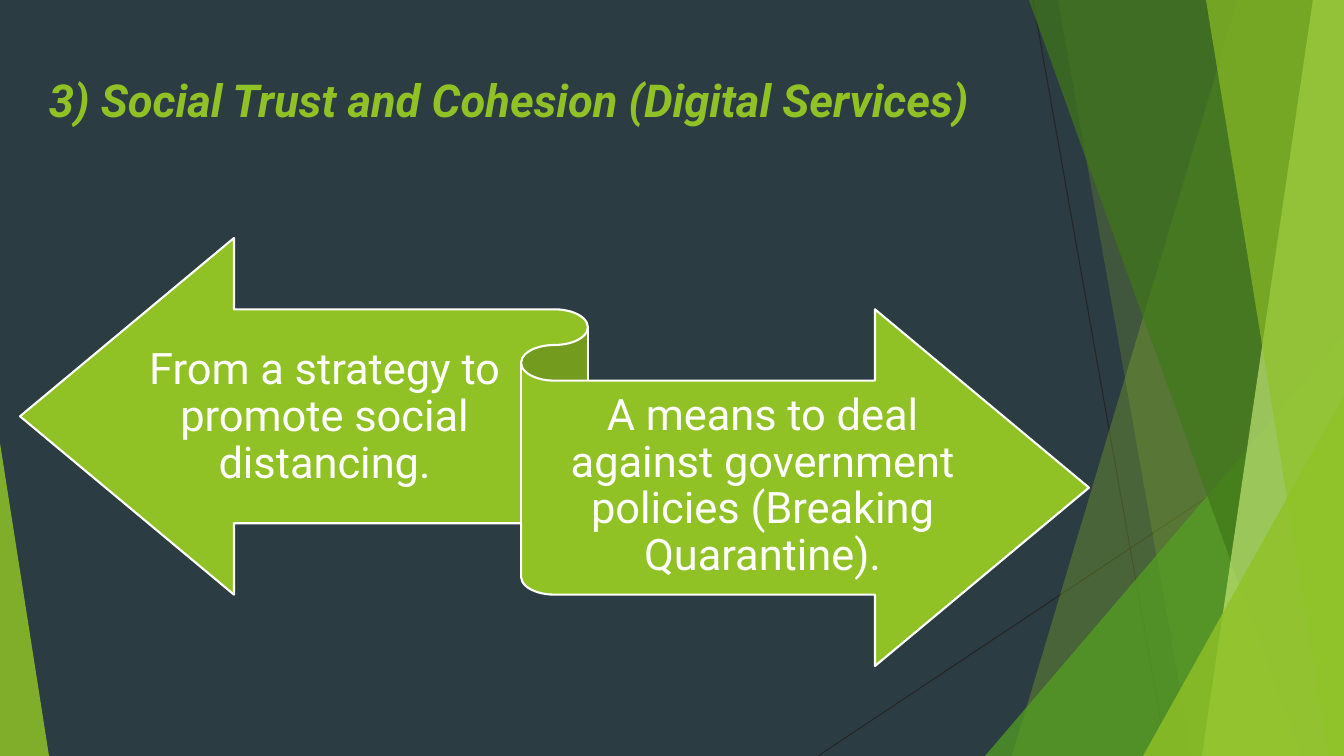
from lxml.etree import SubElement
from pptx import Presentation
from pptx.dml.color import RGBColor
from pptx.enum.shapes import MSO_CONNECTOR, MSO_SHAPE
from pptx.enum.text import MSO_ANCHOR, PP_ALIGN
from pptx.oxml.ns import qn
from pptx.util import Pt

PX = 914400 / 100.8
WIDTH, HEIGHT = 1344, 756
SLATE = RGBColor(0x2C, 0x3C, 0x43)
CHARCOAL = RGBColor(0x26, 0x26, 0x26)
LIME = RGBColor(0x90, 0xC2, 0x26)
GREEN = RGBColor(0x54, 0xA0, 0x21)
FOREST = RGBColor(0x3F, 0x78, 0x19)
PALE_LIME = RGBColor(0xC0, 0xE4, 0x74)
WHITE = RGBColor(0xFF, 0xFF, 0xFF)


def px(*lengths):
    return [round(length * PX) for length in lengths]


def add_text(box, words, size, color, align, anchor, insets):
    left, top, width, height = box
    frame = slide.shapes.add_textbox(*px(left, top, width, height)).text_frame
    frame.word_wrap = True
    frame.vertical_anchor = anchor
    frame.margin_left, frame.margin_top, frame.margin_right, frame.margin_bottom = px(*insets)
    paragraph = frame.paragraphs[0]
    paragraph.alignment = align
    run = paragraph.add_run()
    run.text = words
    run.font.name = "Roboto"
    run.font.size = Pt(size)
    run.font.color.rgb = color
    return paragraph


deck = Presentation()
deck.slide_width, deck.slide_height = px(WIDTH, HEIGHT)
slide = deck.slides.add_slide(deck.slide_layouts[6])
slide.background.fill.solid()
slide.background.fill.fore_color.rgb = SLATE

for ends in [(1033, 0, 1167, HEIGHT), (WIDTH, 406, 818, HEIGHT)]:
    ray = slide.shapes.add_connector(MSO_CONNECTOR.STRAIGHT, *px(*ends))
    ray.line.color.rgb = CHARCOAL
    ray.line.width = Pt(0.75)
    SubElement(ray._element.spPr, qn("a:effectLst"))

facets = [
    ("panel", (1238, 1012), LIME, 30),
    ("panel", (1058, 1192), LIME, 20),
    ("triangle", (985, 336, 359, 1), GREEN, 72),
    ("panel", (1029, 1301), FOREST, 70),
    ("panel", (1313, 1202), PALE_LIME, 70),
    ("panel", (1206, 1329), LIME, 65),
    ("triangle", (1143, 396, 201, 1), LIME, 80),
    ("triangle", (0, 443, 49, 0), LIME, 85),
]
for kind, outline, color, opacity in facets:
    if kind == "panel":
        top_x, bottom_x = outline
        builder = slide.shapes.build_freeform(top_x, 0, scale=PX)
        builder.add_line_segments([(WIDTH, 0), (WIDTH, HEIGHT), (bottom_x, HEIGHT)], close=True)
        facet = builder.convert_to_shape()
    else:
        left, top, width, tip = outline
        facet = slide.shapes.add_shape(
            MSO_SHAPE.ISOSCELES_TRIANGLE, *px(left, top, width, HEIGHT - top))
        facet.adjustments[0] = tip
    facet.shadow.inherit = False
    facet.line.fill.background()
    facet.fill.solid()
    facet.fill.fore_color.rgb = color
    tint = facet._element.spPr.find(qn("a:solidFill"))[0]
    SubElement(tint, qn("a:alpha"), val=str(opacity * 1000))

title = add_text((39, 67, 1050, 108), "3) Social Trust and Cohesion (Digital Services)",
                 32.4, LIME, PP_ALIGN.LEFT, MSO_ANCHOR.TOP, (10, 5, 10, 5))
title.runs[0].font.bold = True
title.runs[0].font.italic = True

ribbon = slide.shapes.add_shape(MSO_SHAPE.LEFT_RIGHT_RIBBON, *px(20, 238, 1069, 428))
ribbon.shadow.inherit = False
ribbon.fill.solid()
ribbon.fill.fore_color.rgb = LIME
ribbon.line.color.rgb = WHITE
ribbon.line.width = Pt(1.5)

for box, words in [
    ((148, 313, 353, 210), "From a strategy to promote social distancing."),
    ((554, 382, 417, 210), "A means to deal against government policies (Breaking Quarantine)."),
]:
    arrow_text = add_text(box, words, 31, WHITE, PP_ALIGN.CENTER, MSO_ANCHOR.MIDDLE, (0, 12, 0, 13))
    arrow_text.line_spacing = 0.9

deck.save("out.pptx")
